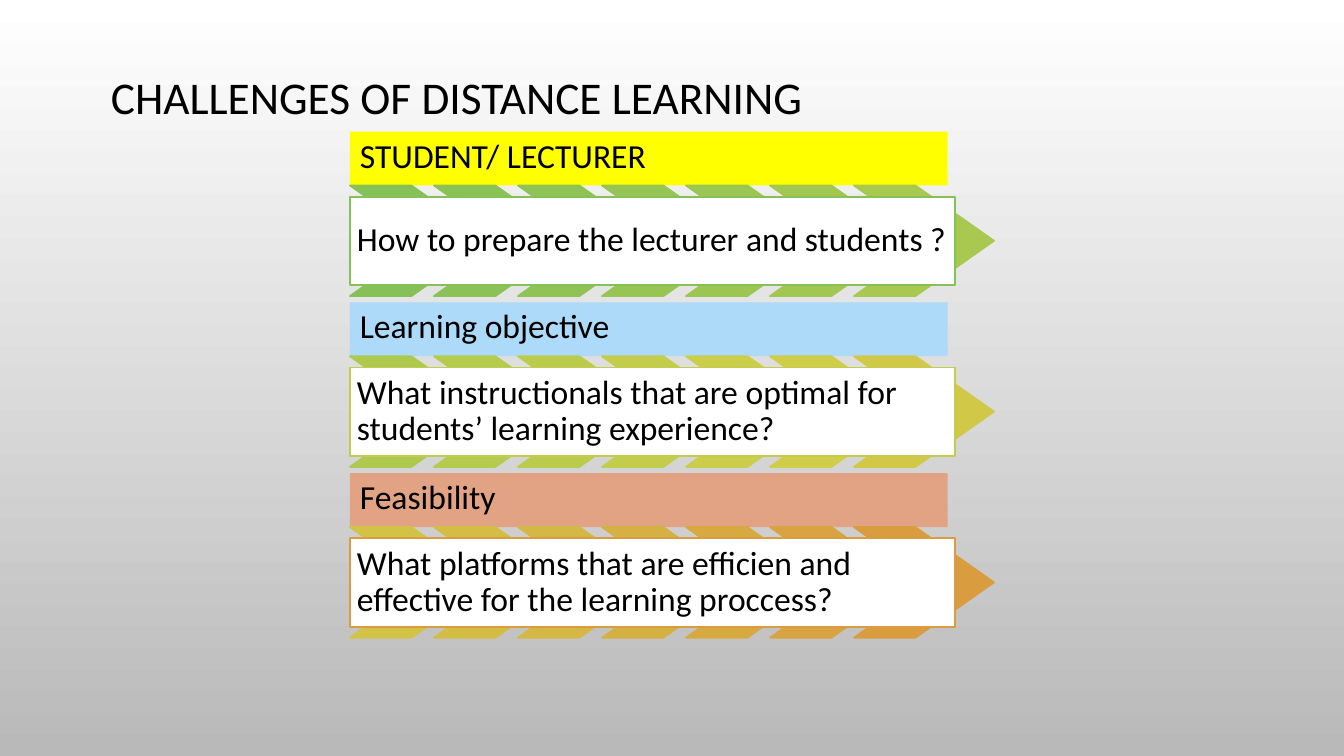
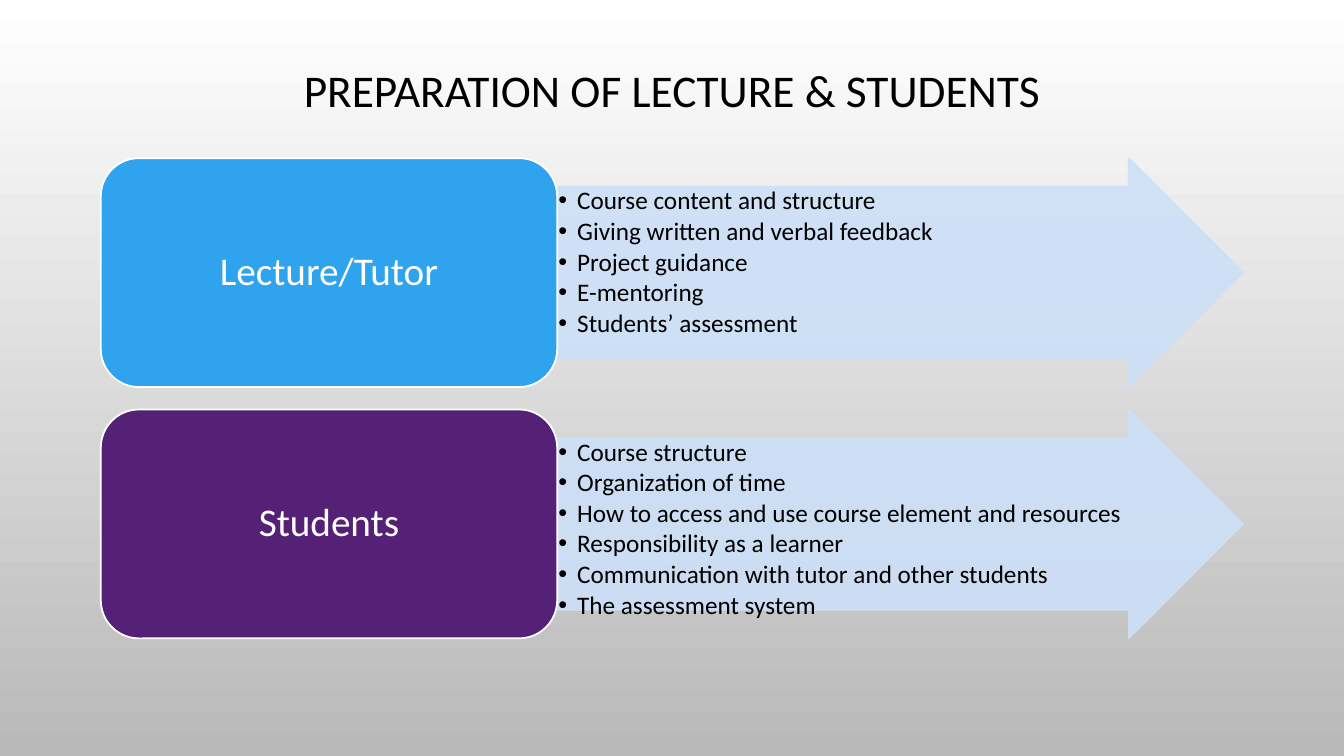
from dataclasses import dataclass

from lxml import etree
from pptx import Presentation
from pptx.dml.color import RGBColor
from pptx.enum.shapes import MSO_SHAPE
from pptx.enum.text import MSO_ANCHOR, MSO_AUTO_SIZE, PP_ALIGN
from pptx.oxml.ns import qn
from pptx.util import Pt

RECTANGLE = MSO_SHAPE.RECTANGLE
CHEVRON = MSO_SHAPE.CHEVRON
ROUNDED = MSO_SHAPE.ROUNDED_RECTANGLE
ARROW = MSO_SHAPE.RIGHT_ARROW
LEFT, CENTER = PP_ALIGN.LEFT, PP_ALIGN.CENTER
TOP, MIDDLE, BOTTOM = MSO_ANCHOR.TOP, MSO_ANCHOR.MIDDLE, MSO_ANCHOR.BOTTOM
NO_AUTOFIT = MSO_AUTO_SIZE.NONE

FONT = "Calibri"
BLACK, WHITE = "000000", "FFFFFF"
BACKGROUND_STOPS = (WHITE, "B9B9B9")
ARROW_BLUE = "CDE0F8"
LINE_WIDTH = 1.25
TITLE_ONLY, TWO_CONTENT = 5, 3


@dataclass
class Area:
    left: float
    top: float
    width: float
    height: float

    def lengths(self):
        return Pt(self.left), Pt(self.top), Pt(self.width), Pt(self.height)


@dataclass
class Challenge:
    heading: str
    question: str
    heading_fill: str
    border: str
    chevron_fills: tuple[str, ...]


@dataclass
class Preparation:
    group: str
    fill: str
    topics: tuple[str, ...]


CHALLENGES = (
    Challenge("STUDENT/ LECTURER", "How to prepare the lecturer and students ?",
              "FFFF00", "86C157",
              ("86C157", "8BC256", "90C355", "96C553", "9BC652", "A1C751", "A8C850")),
    Challenge("Learning objective",
              "What instructionals that are optimal for students’ learning experience?",
              "ACDAF8", "C3CD4B",
              ("AEC94F", "B5CB4D", "BBCC4C", "C3CD4B", "CACE4A", "CFCD49", "D1C847")),
    Challenge("Feasibility",
              "What platforms that are efficien and effective for the learning proccess?",
              "E2A385", "D99C3F",
              ("D2C246", "D3BD45", "D4B744", "D5B043", "D7AA41", "D8A340", "D99C3F")),
)

PREPARATIONS = (
    Preparation("Lecture/Tutor", "2FA3EE",
                ("Course content and structure", "Giving written and verbal feedback",
                 "Project guidance", "E-mentoring", "Students’ assessment")),
    Preparation("Students", "542176",
                ("Course structure", "Organization of time",
                 "How to access and use course element and resources",
                 "Responsibility as a learner",
                 "Communication with tutor and other students",
                 "The assessment system")),
)


# Shared helpers

def set_color(color_format, value: str):
    color_format.rgb = RGBColor.from_string(value)


def add_panel(page, kind, area: Area, fill: str, border: str | None = None):
    panel = page.shapes.add_shape(kind, *area.lengths())
    panel.shadow.inherit = False
    panel.fill.solid()
    set_color(panel.fill.fore_color, fill)
    if border:
        set_color(panel.line.color, border)
        panel.line.width = Pt(LINE_WIDTH)
    else:
        panel.line.fill.background()
    return panel


def set_opacity(panel, percent: int):
    for color in panel.element.spPr.iter(qn("a:srgbClr")):
        etree.SubElement(color, qn("a:alpha")).set("val", str(percent * 1000))


def write_text(box, text: str, size: float, color: str = BLACK, align=LEFT,
               anchor=MIDDLE, inset: float = 5, bullet_indent: float = 0,
               space_after: float = 0):
    frame = box.text_frame
    frame.text = text
    frame.word_wrap = True
    frame.auto_size = NO_AUTOFIT
    frame.vertical_anchor = anchor
    frame.margin_left = frame.margin_right = Pt(inset)
    frame.margin_top = frame.margin_bottom = Pt(inset)
    for para in frame.paragraphs:
        if bullet_indent:
            properties = para._p.get_or_add_pPr()
            properties.set("marL", str(Pt(bullet_indent)))
            properties.set("indent", str(-Pt(bullet_indent)))
            etree.SubElement(properties, qn("a:buChar")).set("char", "•")
        para.alignment = align
        para.line_spacing = 0.9
        para.space_before = Pt(0)
        para.space_after = Pt(space_after)
        for span in para.runs:
            span.font.name = FONT
            span.font.size = Pt(size)
            set_color(span.font.color, color)


def place(box, area: Area):
    box.left, box.top, box.width, box.height = area.lengths()


def set_background(deck):
    fill = deck.slide_master.background.fill
    fill.gradient()
    fill.gradient_angle = 270
    for stop, color, position in zip(fill.gradient_stops, BACKGROUND_STOPS, (0, 1)):
        set_color(stop.color, color)
        stop.position = position


def add_page(deck, layout: int, title: str, title_height: float, align):
    page = deck.slides.add_slide(deck.slide_layouts[layout])
    place(page.shapes.title, Area(72, 49, 816, title_height))
    write_text(page.shapes.title, title, 32.4, align=align, inset=7.2)
    return page


# Slide 1: headed questions on rows of chevrons

def add_challenge(page, challenge: Challenge, top: float):
    left = 250
    heading = add_panel(page, RECTANGLE, Area(left, top, 427, 38.5),
                        challenge.heading_fill)
    write_text(heading, challenge.heading, 24, anchor=BOTTOM, inset=7.2)
    for column, fill in enumerate(challenge.chevron_fills):
        area = Area(left + 60 * column, top + 38.5, 100, 79)
        chevron = add_panel(page, CHEVRON, area, fill, fill)
        chevron.adjustments[0] = 0.71
    question = add_panel(page, RECTANGLE, Area(left, top + 46.5, 432, 63.2),
                         WHITE, challenge.border)
    write_text(question, challenge.question, 24)


def build_challenges(deck):
    page = add_page(deck, TITLE_ONLY, "CHALLENGES OF DISTANCE LEARNING", 45, LEFT)
    for row, challenge in enumerate(CHALLENGES):
        add_challenge(page, challenge, 94 + 122 * row)


# Slide 2: groups with their topics on arrows

def add_preparation(page, topic_list, preparation: Preparation, top: float):
    height = 163.5
    arrow = add_panel(page, ARROW, Area(398, top, 490, height), ARROW_BLUE, ARROW_BLUE)
    arrow.adjustments[0], arrow.adjustments[1] = 0.75, 0.5
    set_opacity(arrow, 90)
    # Bring the list in front of its arrow
    page.shapes.element.append(topic_list.element)
    place(topic_list, Area(398, top + 20.5, 428, 122.5))
    write_text(topic_list, "\n".join(preparation.topics), 18, anchor=TOP, inset=0.8,
               bullet_indent=13.5, space_after=2.4)
    group = add_panel(page, ROUNDED, Area(72, top, 326, height), preparation.fill, WHITE)
    write_text(group, preparation.group, 28, WHITE, CENTER)


def build_preparations(deck):
    page = add_page(deck, TWO_CONTENT, "PREPARATION OF LECTURE & STUDENTS", 35, CENTER)
    topic_lists = list(page.placeholders)[1:]
    for row, (topic_list, preparation) in enumerate(zip(topic_lists, PREPARATIONS)):
        add_preparation(page, topic_list, preparation, 113 + 179.5 * row)


def main():
    deck = Presentation()
    deck.slide_width, deck.slide_height = Pt(960), Pt(540)
    set_background(deck)
    build_challenges(deck)
    build_preparations(deck)
    deck.save("out.pptx")


if __name__ == "__main__":
    main()
